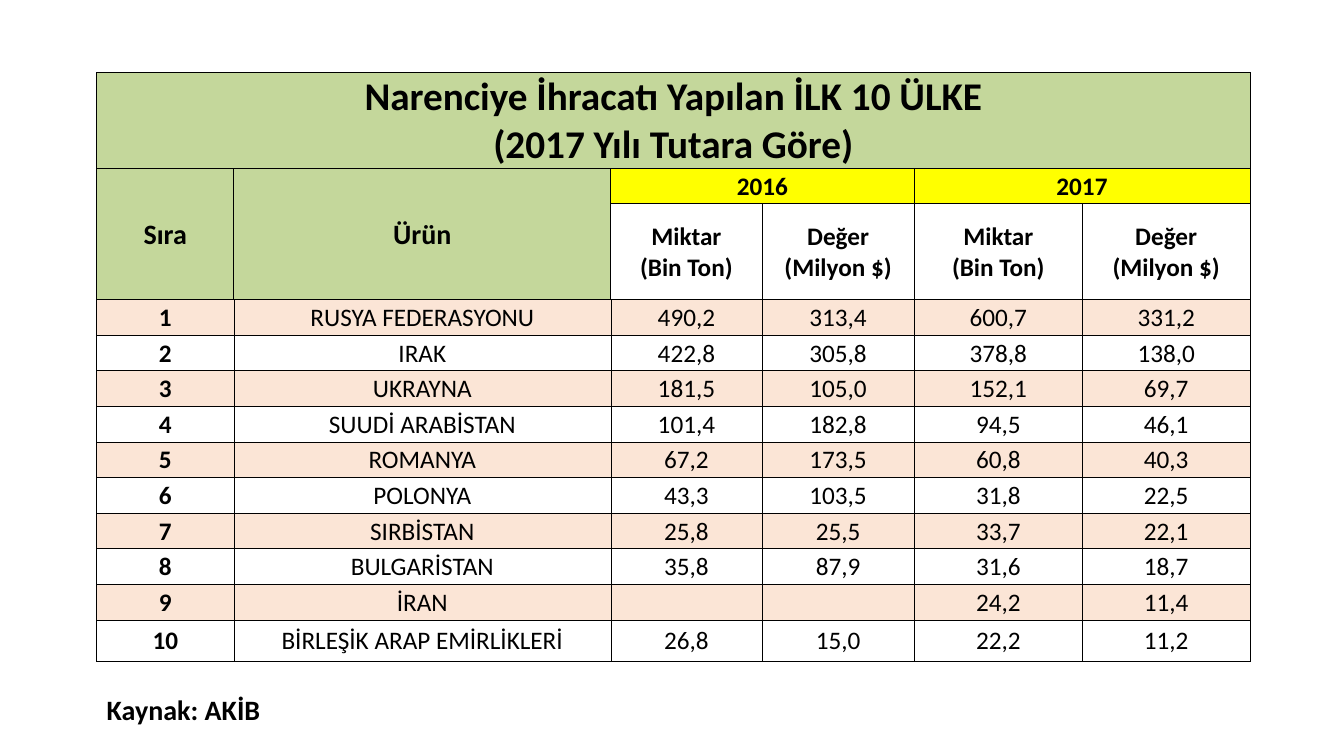
from dataclasses import dataclass
from typing import Optional

from lxml.etree import SubElement
from pptx import Presentation
from pptx.dml.color import RGBColor
from pptx.enum.text import MSO_ANCHOR, MSO_AUTO_SIZE, PP_ALIGN
from pptx.oxml.ns import qn
from pptx.util import Inches, Pt

BLACK = RGBColor(0x00, 0x00, 0x00)
GREEN = RGBColor(0xC4, 0xD7, 0x9B)
YELLOW = RGBColor(0xFF, 0xFF, 0x00)
PEACH = RGBColor(0xFB, 0xE5, 0xD6)

SLIDE_WIDTH, SLIDE_HEIGHT = Inches(13.33), Inches(7.5)
LEFT = 0.072
TABLE_TOP, TABLE_WIDTH, TABLE_HEIGHT = 0.096, 0.858, 0.779
SOURCE_TOP, SOURCE_WIDTH, SOURCE_HEIGHT = 0.909, 0.487, 0.059
COLUMN_UNITS = [136, 374, 150, 151, 167, 166]
ROW_UNITS = [95, 35] + [95] + [35.3] * 9 + [41]
HEADER_ROWS = 3
THIN, THICK = 0.5, 1

COUNTRIES = [
    ("RUSYA FEDERASYONU", "490,2", "313,4", "600,7", "331,2"),
    ("IRAK", "422,8", "305,8", "378,8", "138,0"),
    ("UKRAYNA", "181,5", "105,0", "152,1", "69,7"),
    ("SUUDİ ARABİSTAN", "101,4", "182,8", "94,5", "46,1"),
    ("ROMANYA", "67,2", "173,5", "60,8", "40,3"),
    ("POLONYA", "43,3", "103,5", "31,8", "22,5"),
    ("SIRBİSTAN", "25,8", "25,5", "33,7", "22,1"),
    ("BULGARİSTAN", "35,8", "87,9", "31,6", "18,7"),
    ("İRAN", "", "", "24,2", "11,4"),
    ("BİRLEŞİK ARAP EMİRLİKLERİ", "26,8", "15,0", "22,2", "11,2"),
]


@dataclass(frozen=True)
class Entry:
    row: int
    column: int
    text: str
    size: int = 18
    bold: bool = True
    fill: Optional[RGBColor] = None
    rows: int = 1
    columns: int = 1


def table_entries() -> list[Entry]:
    title = "Narenciye İhracatı Yapılan İLK 10 ÜLKE\n(2017 Yılı Tutara Göre)"
    entries = [
        Entry(0, 0, title, size=28, fill=GREEN, columns=len(COLUMN_UNITS)),
        Entry(1, 0, "Sıra", size=20, fill=GREEN, rows=2),
        Entry(1, 1, "Ürün", size=20, fill=GREEN, rows=2),
    ]
    for column, year in ((2, "2016"), (4, "2017")):
        entries += [
            Entry(1, column, year, fill=YELLOW, columns=2),
            Entry(2, column, "Miktar\n(Bin Ton)"),
            Entry(2, column + 1, "Değer\n(Milyon $)"),
        ]
    for rank, country in enumerate(COUNTRIES, start=1):
        fill = PEACH if rank % 2 else None
        for column, text in enumerate((str(rank), *country)):
            row = HEADER_ROWS + rank - 1
            entries.append(Entry(row, column, text, bold=column == 0, fill=fill))
    return entries


def write(para, text: str, size: int, bold: bool) -> None:
    for index, line in enumerate(text.split("\n")):
        if index:
            para.add_line_break()
        span = para.add_run()
        span.text = line
        span.font.color.rgb = BLACK
        for name, value in {"name": "Calibri", "size": Pt(size), "bold": bold}.items():
            setattr(span.font, name, value)


def draw_borders(cell, row: int, column: int) -> None:
    heading = row in (1, 2)
    widths = {
        "a:lnL": THICK if heading and column <= 2 else THIN,
        "a:lnR": THICK if heading and column <= 1 else THIN,
        "a:lnT": THIN,
        "a:lnB": THIN,
    }
    properties = cell._tc.get_or_add_tcPr()
    for index, (tag, width) in enumerate(widths.items()):
        line = SubElement(properties, qn(tag), w=str(Pt(width)))
        solid = SubElement(line, qn("a:solidFill"))
        SubElement(solid, qn("a:srgbClr"), val=str(BLACK))
        properties.insert(index, line)


def fill_entry(table, entry: Entry) -> None:
    cell = table.cell(entry.row, entry.column)
    if entry.rows * entry.columns > 1:
        cell.merge(table.cell(entry.row + entry.rows - 1, entry.column + entry.columns - 1))
    if entry.fill is None:
        cell.fill.background()
    else:
        cell.fill.solid()
        cell.fill.fore_color.rgb = entry.fill
    para = cell.text_frame.paragraphs[0]
    para.alignment = PP_ALIGN.CENTER
    if entry.text:
        write(para, entry.text, entry.size, entry.bold)


def draw_table(page) -> None:
    width, height = SLIDE_WIDTH * TABLE_WIDTH, SLIDE_HEIGHT * TABLE_HEIGHT
    table = page.shapes.add_table(
        len(ROW_UNITS), len(COLUMN_UNITS),
        int(SLIDE_WIDTH * LEFT), int(SLIDE_HEIGHT * TABLE_TOP), int(width), int(height),
    ).table
    table.first_row = table.horz_banding = False
    for column, units in zip(table.columns, COLUMN_UNITS):
        column.width = int(width * units / sum(COLUMN_UNITS))
    for row, units in zip(table.rows, ROW_UNITS):
        row.height = int(height * units / sum(ROW_UNITS))
    for entry in table_entries():
        fill_entry(table, entry)
    cell_format = {
        "vertical_anchor": MSO_ANCHOR.MIDDLE,
        "margin_left": Inches(0.01),
        "margin_right": Inches(0.01),
        "margin_top": Inches(0.01),
        "margin_bottom": 0,
    }
    for row in range(len(ROW_UNITS)):
        for column in range(len(COLUMN_UNITS)):
            cell = table.cell(row, column)
            for name, value in cell_format.items():
                setattr(cell, name, value)
            draw_borders(cell, row, column)


def draw_source(page) -> None:
    box = page.shapes.add_textbox(
        int(SLIDE_WIDTH * LEFT), int(SLIDE_HEIGHT * SOURCE_TOP),
        int(SLIDE_WIDTH * SOURCE_WIDTH), int(SLIDE_HEIGHT * SOURCE_HEIGHT),
    )
    frame_format = {"word_wrap": True, "auto_size": MSO_AUTO_SIZE.SHAPE_TO_FIT_TEXT}
    for name, value in frame_format.items():
        setattr(box.text_frame, name, value)
    write(box.text_frame.paragraphs[0], "Kaynak: AKİB", 20, True)


def main() -> None:
    deck = Presentation()
    deck.slide_width, deck.slide_height = SLIDE_WIDTH, SLIDE_HEIGHT
    page = deck.slides.add_slide(deck.slide_layouts[6])
    draw_source(page)
    draw_table(page)
    deck.save("out.pptx")


if __name__ == "__main__":
    main()
